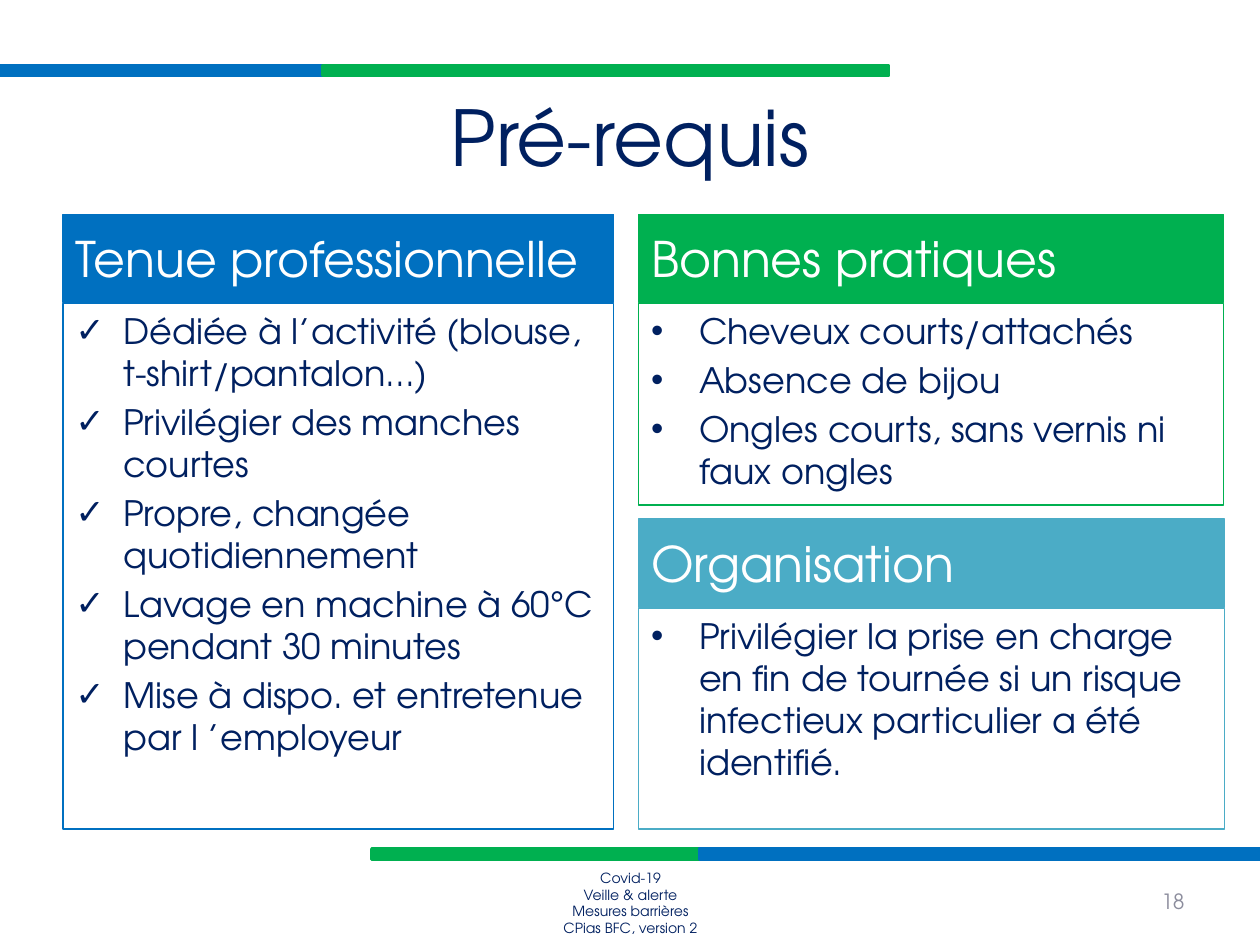
import pptx
import pptx.dml.color
import pptx.enum.shapes
import pptx.enum.text
import pptx.util
from lxml import etree
from pptx.oxml.ns import qn

Inches = pptx.util.Inches
Pt = pptx.util.Pt
RGBColor = pptx.dml.color.RGBColor
Align = pptx.enum.text.PP_ALIGN
Anchor = pptx.enum.text.MSO_ANCHOR

FONT = "TeX Gyre Adventor"
BLUE = RGBColor(0x00, 0x70, 0xC0)
GREEN = RGBColor(0x00, 0xB0, 0x50)
TEAL = RGBColor(0x4B, 0xAC, 0xC6)
NAVY = RGBColor(0x00, 0x20, 0x60)
GREY = RGBColor(0x8C, 0x8D, 0x9D)
WHITE = RGBColor(0xFF, 0xFF, 0xFF)

TITLE = {"size": Pt(44), "color": NAVY}
HEADING = {"size": Pt(28), "color": WHITE}
BODY = {"size": Pt(20), "color": NAVY}
FOOTER = {"size": Pt(8), "color": NAVY}
NUMBER = {"size": Pt(12), "color": GREY}

HEADING_HEIGHT = 0.7
INDENT = 0.38

# left, top, width, height, colour, bullet, heading, items
PANELS = [
    (0.5, 1.7, 4.37, 4.88, BLUE, "✓", "Tenue professionnelle", [
        "Dédiée à l’activité (blouse, t-shirt/pantalon...)",
        "Privilégier des manches courtes",
        "Propre, changée quotidiennement",
        "Lavage en machine à 60°C pendant 30 minutes",
        "Mise à dispo. et entretenue par l ’employeur",
    ]),
    (5.07, 1.7, 4.64, 2.31, GREEN, "•", "Bonnes pratiques", [
        "Cheveux courts/attachés",
        "Absence de bijou",
        "Ongles courts, sans vernis ni faux ongles",
    ]),
    (5.07, 4.12, 4.65, 2.46, TEAL, "•", "Organisation", [
        "Privilégier la prise en charge en fin de tournée si un risque "
        "infectieux particulier a été identifié.",
    ]),
]

# left, top, colour, from back to front
BARS = [
    (-0.04, 0.52, BLUE),
    (2.56, 0.52, GREEN),
    (2.95, 6.74, GREEN),
    (5.55, 6.74, BLUE),
]


def add_bullet(para, bullet):
    properties = para._p.get_or_add_pPr()
    properties.set("marL", str(Inches(INDENT)))
    properties.set("indent", str(-Inches(INDENT)))
    etree.SubElement(properties, qn("a:buFont")).set("typeface", "Arial")
    etree.SubElement(properties, qn("a:buChar")).set("char", bullet)


def write(box, lines, style, align=Align.LEFT, anchor=Anchor.TOP, bullet=None):
    frame = box.text_frame
    frame.word_wrap = True
    frame.vertical_anchor = anchor
    for index, line in enumerate(lines):
        para = frame.paragraphs[0] if index == 0 else frame.add_paragraph()
        para.alignment = align
        if bullet:
            add_bullet(para, bullet)
            if index:
                para.space_before = Pt(4)
        span = para.add_run()
        span.text = line
        for name, value in {"name": FONT, "size": style["size"]}.items():
            setattr(span.font, name, value)
        span.font.color.rgb = style["color"]


def add_text(page, left, top, width, height, lines, style, **layout):
    box = page.shapes.add_textbox(
        Inches(left), Inches(top), Inches(width), Inches(height))
    write(box, lines, style, **layout)


def add_rectangle(page, left, top, width, height, color, line_width=0.75,
                  filled=True):
    box = page.shapes.add_shape(
        pptx.enum.shapes.MSO_SHAPE.RECTANGLE,
        Inches(left), Inches(top), Inches(width), Inches(height))
    box.shadow.inherit = False
    if filled:
        box.fill.solid()
        box.fill.fore_color.rgb = color
    else:
        box.fill.background()
    box.line.color.rgb = color
    box.line.width = Pt(line_width)
    return box


def add_panel(page, left, top, width, height, color, bullet, heading, items):
    """Add a filled heading with an outlined list under it."""
    body = add_rectangle(page, left, top + HEADING_HEIGHT + 0.01, width,
                         height - HEADING_HEIGHT - 0.01, color, filled=False)
    write(body, items, BODY, bullet=bullet)
    header = add_rectangle(page, left, top, width, HEADING_HEIGHT, color)
    write(header, [heading], HEADING, anchor=Anchor.MIDDLE)


def main():
    deck = pptx.Presentation()
    deck.slide_width, deck.slide_height = Inches(10), Inches(7.5)
    page = deck.slides.add_slide(deck.slide_layouts[6])

    for left, top, color in BARS:
        add_rectangle(page, left, top, 4.49, 0.08, color, line_width=2)
    add_text(page, 0.5, 0.6, 9, 0.95, ["Pré-requis"], TITLE,
             align=Align.CENTER, anchor=Anchor.MIDDLE)
    for panel in PANELS:
        add_panel(page, *panel)
    add_text(page, 3.42, 6.85, 3.17, 0.68,
             ["Covid-19", "Veille & alerte", "Mesures barrières",
              "CPias BFC, version 2"], FOOTER, align=Align.CENTER)
    add_text(page, 7.17, 6.95, 2.33, 0.4, ["18"], NUMBER,
             align=Align.RIGHT, anchor=Anchor.MIDDLE)

    deck.save("out.pptx")


if __name__ == "__main__":
    main()
